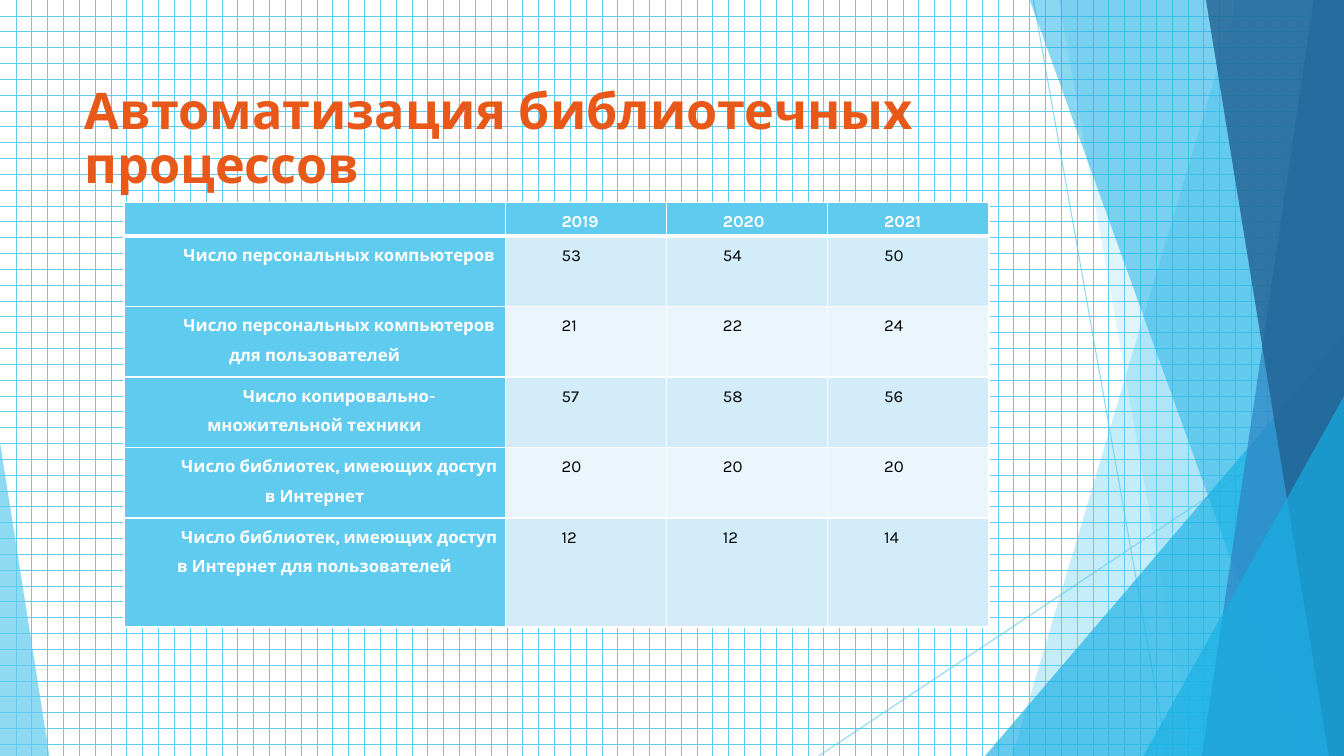
from lxml import etree
from pptx import Presentation
from pptx import util as u
from pptx.dml.color import RGBColor
from pptx.enum import dml, shapes, text
from pptx.oxml.ns import qn


def color(value):
    return RGBColor.from_string(value)


def paint(fill, value, alpha=100):
    fill.solid()
    fill.fore_color.rgb = color(value)
    if alpha < 100:
        srgb = fill._xPr.find(qn("a:solidFill"))[0]
        etree.SubElement(srgb, qn("a:alpha"), val=str(alpha * 1000))


SKY, CYAN, WHITE = "5FCBEF", "17B0E4", "FFFFFF"
FONT = "Karla"

deck = Presentation()
deck.slide_width, deck.slide_height = u.Inches(13.33), u.Inches(7.5)
page = deck.slides.add_slide(deck.slide_layouts[6])
backdrop = page.background.fill
backdrop.patterned()
backdrop.pattern = dml.MSO_PATTERN.DOTTED_GRID
backdrop.fore_color.rgb = color(SKY)
backdrop.back_color.rgb = color(WHITE)

for ends in [(10.25, 0, 11.58, 7.5), (13.33, 4.03, 8.12, 7.5)]:
    ray = page.shapes.add_connector(
        shapes.MSO_CONNECTOR.STRAIGHT, *[u.Inches(v) for v in ends])
    ray.line.width = u.Pt(0.75)
    paint(ray.line.fill, SKY, 70)
    etree.SubElement(ray._element.spPr, qn("a:effectLst"))

facets = [
    ("panel", (12.28, 10.04), SKY, 36),
    ("panel", (10.5, 11.83), SKY, 20),
    ("triangle", (9.77, 3.33, 3.56, 4.17, 1), CYAN, 66),
    ("panel", (10.21, 12.91), CYAN, 50),
    ("panel", (13.03, 11.92), "2E83C3", 70),
    ("panel", (11.96, 13.18), "226292", 80),
    ("triangle", (11.34, 3.93, 1.99, 3.57, 1), CYAN, 66),
    ("triangle", (0, 4.39, 0.49, 3.11, 0), SKY, 70),
]
for kind, geometry, tint, alpha in facets:
    if kind == "panel":
        top_x, bottom_x = geometry
        corners = [(u.Inches(x), u.Inches(y)) for x, y in
                   [(top_x, -0.01), (13.33, -0.01), (13.33, 7.5), (bottom_x, 7.5)]]
        outline = page.shapes.build_freeform(*corners[0])
        outline.add_line_segments(corners[1:], close=True)
        facet = outline.convert_to_shape()
    else:
        *frame, apex = geometry
        facet = page.shapes.add_shape(
            shapes.MSO_SHAPE.ISOSCELES_TRIANGLE, *[u.Inches(v) for v in frame])
        facet.adjustments[0] = apex
    paint(facet.fill, tint, alpha)
    facet.line.fill.background()
    facet.shadow.inherit = False

title = page.shapes.add_textbox(
    u.Inches(0.74), u.Inches(0.67), u.Inches(10.68), u.Inches(1.44))
box = title.text_frame
box.word_wrap = True
box.vertical_anchor = text.MSO_ANCHOR.MIDDLE
para = box.paragraphs[0]
para.line_spacing = 0.9
span = para.add_run()
span.text = "Автоматизация библиотечных процессов"
for name, value in {"name": FONT, "size": u.Pt(36), "bold": True}.items():
    setattr(span.font, name, value)
span.font.color.rgb = color("E85818")

rows = [
    ("", "2019", "2020", "2021"),
    ("Число персональных компьютеров", "53", "54", "50"),
    ("Число персональных компьютеров для пользователей", "21", "22", "24"),
    ("Число копировально-множительной техники", "57", "58", "56"),
    ("Число библиотек, имеющих доступ в Интернет", "20", "20", "20"),
    ("Число библиотек, имеющих доступ в Интернет для пользователей", "12", "12", "14"),
]
table = page.shapes.add_table(
    len(rows), 4, u.Inches(1.23), u.Inches(2.01), u.Inches(8.56), u.Inches(4.23)).table
for column, width in zip(table.columns, [3.78, 1.6, 1.6, 1.6]):
    column.width = u.Inches(width)
for row, height in zip(table.rows, [0.33, 0.7, 0.7, 0.7, 0.7, 1.08]):
    row.height = u.Inches(height)

margins = {"margin_left": u.Inches(0.07), "margin_right": u.Inches(0.07),
           "margin_top": 0, "margin_bottom": 0}
for r, values in enumerate(rows):
    for c, value in enumerate(values):
        cell = table.cell(r, c)
        heading = r == 0 or c == 0
        for name, margin in margins.items():
            setattr(cell, name, margin)
        para = cell.text_frame.paragraphs[0]
        para.line_spacing = 1.5
        if r == 0:
            para.alignment = text.PP_ALIGN.JUSTIFY
        elif c == 0:
            para.alignment = text.PP_ALIGN.CENTER
        para._p.get_or_add_pPr().set("indent", str(u.Inches(0.49)))
        span = para.add_run()
        span.text = value
        for name, setting in {"name": FONT, "size": u.Pt(12), "bold": heading}.items():
            setattr(span.font, name, setting)
        span.font.color.rgb = color(WHITE if heading else "000000")

        props = cell._tc.get_or_add_tcPr()
        for side in "LRTB":
            thick = (r == 0 and side == "B") or (r == 1 and side == "T")
            border = etree.SubElement(
                props, qn(f"a:ln{side}"), w=str(u.Pt(3 if thick else 1)))
            solid = etree.SubElement(border, qn("a:solidFill"))
            etree.SubElement(solid, qn("a:srgbClr"), val=WHITE)
        paint(cell.fill, SKY if heading else "D2ECF9" if r % 2 else "EAF6FC")

deck.save("out.pptx")
